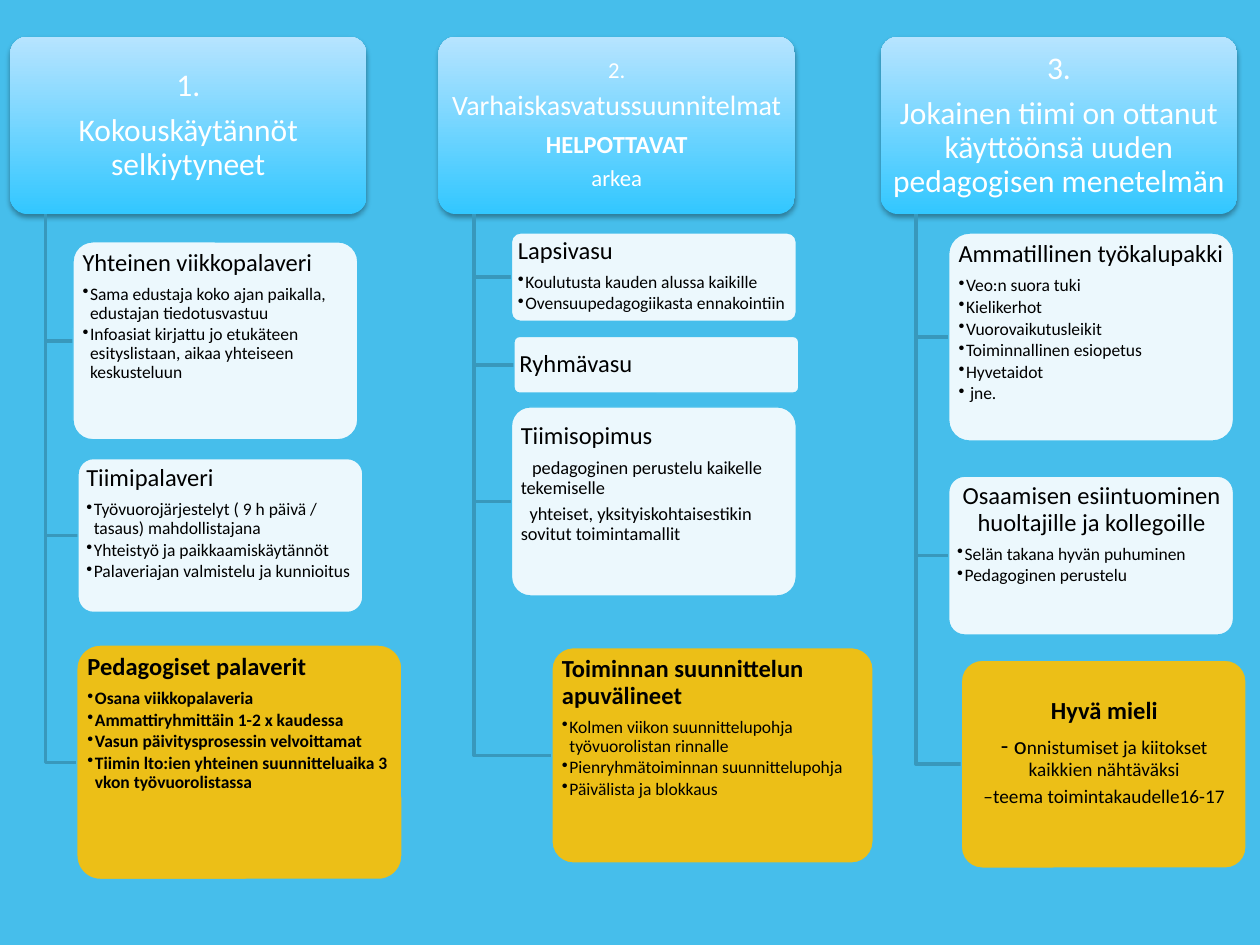
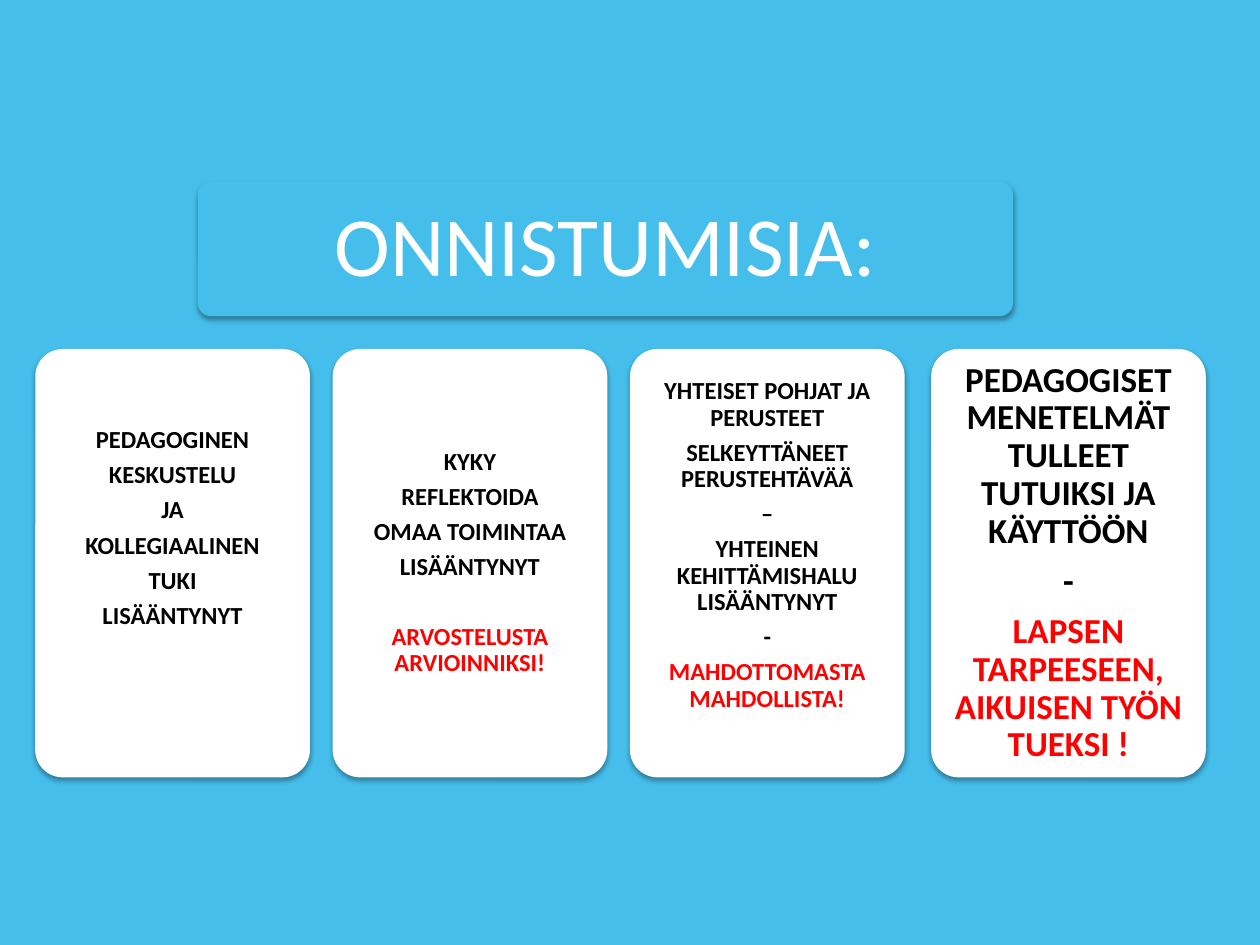
from lxml import etree
from pptx import Presentation
from pptx.dml.color import RGBColor
from pptx.enum.shapes import MSO_SHAPE
from pptx.enum.text import MSO_ANCHOR, PP_ALIGN
from pptx.oxml.ns import qn
from pptx.util import Inches, Pt

ROUNDED = MSO_SHAPE.ROUNDED_RECTANGLE
TOP, MIDDLE = MSO_ANCHOR.TOP, MSO_ANCHOR.MIDDLE
LEFT, CENTER = PP_ALIGN.LEFT, PP_ALIGN.CENTER

SKY, TRUNK = "46BEEB", "3898BC"
DEEP_BLUE, PALE_BLUE = "32C7FF", "B7E4FF"
WHITE, BLACK, AMBER, RED = "FFFFFF", "000000", "FFC000", "FF0000"

HEADER_TOP, HEADER_WIDTH, HEADER_HEIGHT = 0.29, 2.83, 1.41
TRUNK_OFFSET = 0.28


def rgb(color):
    return RGBColor.from_string(color)


def para(*runs, size=14, color=BLACK, bold=False, align=LEFT,
         gap=0.35, bullet=False, indent=0, extra=0):
    runs = [run if isinstance(run, tuple) else (run, {}) for run in runs]
    return dict(runs=runs, size=size, color=color, bold=bold, align=align,
                gap=gap, bullet=bullet, indent=indent, extra=extra)


def bullets(*texts, bold=False):
    return [para(text, size=10, gap=0.15, bullet=True, bold=bold) for text in texts]


def centred(*texts, **style):
    return [para(text, align=CENTER, **style) for text in texts]


def add_paragraph_marks(paragraph, spec_values):
    properties = paragraph._p.get_or_add_pPr()
    if spec_values["bullet"]:
        properties.set("marL", str(Inches(0.06)))
        properties.set("indent", str(-Inches(0.06)))
        etree.SubElement(properties, qn("a:buChar"), char="•")
    elif spec_values["indent"]:
        properties.set("indent", str(Inches(spec_values["indent"])))


def write_text(shape, paragraphs, anchor, insets):
    frame = shape.text_frame
    frame.word_wrap = True
    frame.vertical_anchor = anchor
    for side, inset in zip(("left", "top", "right", "bottom"), insets):
        setattr(frame, f"margin_{side}", Inches(inset))
    for index, values in enumerate(paragraphs):
        paragraph = frame.add_paragraph() if index else frame.paragraphs[0]
        spacing = {
            "alignment": values["align"],
            "line_spacing": 0.9,
            "space_before": Pt(0),
            "space_after": Pt(values["size"] * values["gap"] + values["extra"]),
        }
        for name, value in spacing.items():
            setattr(paragraph, name, value)
        add_paragraph_marks(paragraph, values)
        for text, changes in values["runs"]:
            run = paragraph.add_run()
            run.text = text
            style = {"name": "Calibri", "size": Pt(values["size"]),
                     "bold": values["bold"]} | changes
            for name, value in style.items():
                setattr(run.font, name, value)
            run.font.color.rgb = rgb(values["color"])


def add_rounded(slide, box, fill):
    shape = slide.shapes.add_shape(ROUNDED, *map(Inches, box))
    shape.adjustments[0] = 0.1
    shape.shadow.inherit = False
    shape.fill.solid()
    shape.fill.fore_color.rgb = rgb(fill)
    shape.line.fill.background()
    return shape


def cast_shadow(shape):
    effects = shape._element.spPr.find(qn("a:effectLst"))
    shadow = etree.SubElement(
        effects, qn("a:outerShdw"), blurRad=str(Pt(3.1)), dist=str(Pt(1.8)),
        dir="5400000", algn="t", rotWithShape="0")
    color = etree.SubElement(shadow, qn("a:srgbClr"), val=BLACK)
    etree.SubElement(color, qn("a:alpha"), val="35000")


def add_header(slide, left, paragraphs):
    header = add_rounded(slide, (left, HEADER_TOP, HEADER_WIDTH, HEADER_HEIGHT), DEEP_BLUE)
    header.fill.gradient()
    header.fill.gradient_angle = 90
    for stop, position, color in zip(header.fill.gradient_stops, (0, 1), (DEEP_BLUE, PALE_BLUE)):
        stop.position = position
        stop.color.rgb = rgb(color)
    cast_shadow(header)
    write_text(header, paragraphs, MIDDLE, (0.04, 0.03, 0.04, 0.03))


def add_branch(slide, trunk, box):
    left, top, _, height = box
    start = HEADER_TOP + HEADER_HEIGHT
    middle = top + height / 2
    builder = slide.shapes.build_freeform(Inches(trunk), Inches(start), scale=1)
    builder.add_line_segments(
        [(Inches(trunk), Inches(middle)), (Inches(left), Inches(middle))], close=False)
    branch = builder.convert_to_shape()
    branch.fill.background()
    branch.shadow.inherit = False
    branch.line.color.rgb = rgb(TRUNK)
    branch.line.width = Pt(2)


def add_topic(slide, box, paragraphs, fill=WHITE, anchor=TOP, bottom=0.02):
    topic = add_rounded(slide, box, fill)
    color = topic._element.spPr.find(qn("a:solidFill"))[0]
    etree.SubElement(color, qn("a:alpha"), val="90000")
    topic.line.color.rgb = rgb(SKY)
    topic.line.width = Pt(0.75)
    write_text(topic, paragraphs, anchor, (0.03, 0.02, 0.02, bottom))


def add_column(slide, left, header, topics):
    add_header(slide, left, header)
    for topic in topics:
        add_branch(slide, left + TRUNK_OFFSET, topic["box"])
        add_topic(slide, **topic)


def add_banner(slide, box, text):
    banner = add_rounded(slide, box, SKY)
    cast_shadow(banner)
    write_text(banner, centred(text, size=48, color=WHITE), MIDDLE, (0.2,) * 4)


def add_success(slide, left, paragraphs, inset=0.06, bottom=0):
    success = add_rounded(slide, (left, 2.77, 2.18, 3.4), WHITE)
    cast_shadow(success)
    write_text(success, paragraphs, MIDDLE, (inset, inset, inset, inset + bottom))


def add_blue_slide(deck):
    slide = deck.slides.add_slide(deck.slide_layouts[6])
    slide.background.fill.solid()
    slide.background.fill.fore_color.rgb = rgb(SKY)
    return slide


COLUMNS = [
    (0.08, centred("1.", "Kokouskäytännöt selkiytyneet", size=18, color=WHITE), [
        dict(box=(0.58, 1.92, 2.26, 1.57), paragraphs=[
            para("Yhteinen viikkopalaveri"),
            *bullets("Sama edustaja koko ajan paikalla, edustajan tiedotusvastuu",
                     "Infoasiat kirjattu jo etukäteen esityslistaan, aikaa yhteiseen keskusteluun")]),
        dict(box=(0.62, 3.64, 2.26, 1.22), paragraphs=[
            para("Tiimipalaveri"),
            *bullets("Työvuorojärjestelyt ( 9 h päivä / tasaus) mahdollistajana",
                     "Yhteistyö ja paikkaamiskäytännöt",
                     "Palaveriajan valmistelu ja kunnioitus")]),
        dict(box=(0.61, 5.12, 2.58, 1.86), fill=AMBER, paragraphs=[
            para("Pedagogiset palaverit", bold=True),
            *bullets("Osana viikkopalaveria",
                     "Ammattiryhmittäin 1-2 x kaudessa",
                     "Vasun päivitysprosessin velvoittamat",
                     "Tiimin lto:ien yhteinen suunnitteluaika 3 vkon työvuorolistassa",
                     bold=True)]),
    ]),
    (3.48, [
        *centred("2.", size=13, color=WHITE),
        *centred("Varhaiskasvatussuunnitelmat", size=16, color=WHITE),
        *centred("HELPOTTAVAT", color=WHITE, bold=True),
        *centred("arkea", size=13, color=WHITE)], [
        dict(box=(4.06, 1.85, 2.26, 0.7), paragraphs=[
            para("Lapsivasu"),
            *bullets("Koulutusta kauden alussa kaikille",
                     "Ovensuupedagogiikasta ennakointiin")]),
        dict(box=(4.08, 2.67, 2.26, 0.45), anchor=MIDDLE, paragraphs=[para("Ryhmävasu")]),
        dict(box=(4.06, 3.23, 2.26, 1.5), anchor=MIDDLE, bottom=0.3, paragraphs=[
            para("Tiimisopimus"),
            para("pedagoginen perustelu kaikelle tekemiselle", size=10.5, indent=0.09),
            para("yhteiset, yksityiskohtaisestikin sovitut toimintamallit",
                 size=10.5, indent=0.07)]),
        dict(box=(4.38, 5.14, 2.55, 1.71), fill=AMBER, paragraphs=[
            para("Toiminnan suunnittelun apuvälineet", bold=True),
            *bullets("Kolmen viikon suunnittelupohja työvuorolistan rinnalle",
                     "Pienryhmätoiminnan suunnittelupohja",
                     "Päivälista ja blokkaus")]),
    ]),
    (6.99, centred("3.", "Jokainen tiimi on ottanut käyttöönsä uuden pedagogisen menetelmän",
                   size=18, color=WHITE), [
        dict(box=(7.53, 1.85, 2.26, 1.65), paragraphs=[
            para("Ammatillinen työkalupakki"),
            *bullets("Veo:n suora tuki", "Kielikerhot", "Vuorovaikutusleikit",
                     "Toiminnallinen esiopetus", "Hyvetaidot", " jne.")]),
        dict(box=(7.53, 3.78, 2.26, 1.26), paragraphs=[
            *centred("Osaamisen esiintuominen huoltajille ja kollegoille"),
            *bullets("Selän takana hyvän puhuminen", "Pedagoginen perustelu")]),
        dict(box=(7.63, 5.24, 2.26, 1.65), fill=AMBER, anchor=MIDDLE, bottom=0.2, paragraphs=[
            *centred("Hyvä mieli", bold=True),
            para(("- o", {"size": Pt(14)}), "nnistumiset ja kiitokset kaikkien nähtäväksi",
                 size=11, align=CENTER),
            *centred("–teema toimintakaudelle16-17", size=11)]),
    ]),
]

SUCCESSES = [
    dict(left=0.28, bottom=0.55, paragraphs=centred(
        "PEDAGOGINEN", "KESKUSTELU", "JA", "KOLLEGIAALINEN", "TUKI", "LISÄÄNTYNYT", bold=True)),
    dict(left=2.64, paragraphs=[
        *centred("KYKY", "REFLEKTOIDA", "OMAA TOIMINTAA", bold=True),
        *centred("LISÄÄNTYNYT", bold=True, extra=20),
        *centred("ARVOSTELUSTA ARVIOINNIKSI!", bold=True, color=RED)]),
    dict(left=5, bottom=0.28, paragraphs=[
        *centred("YHTEISET POHJAT JA PERUSTEET", "SELKEYTTÄNEET PERUSTEHTÄVÄÄ", "–",
                 "YHTEINEN KEHITTÄMISHALU LISÄÄNTYNYT", "-", bold=True),
        *centred("MAHDOTTOMASTA MAHDOLLISTA!", bold=True, color=RED)]),
    dict(left=7.39, inset=0.08, paragraphs=[
        *centred("PEDAGOGISET MENETELMÄT TULLEET TUTUIKSI JA KÄYTTÖÖN", "-", size=20, bold=True),
        *centred("LAPSEN TARPEESEEN, AIKUISEN TYÖN TUEKSI !", size=20, bold=True, color=RED)]),
]


def main():
    deck = Presentation()
    deck.slide_width, deck.slide_height = Inches(10), Inches(7.5)

    results = add_blue_slide(deck)
    for left, header, topics in COLUMNS:
        add_column(results, left, header, topics)

    successes = add_blue_slide(deck)
    add_banner(successes, (1.57, 1.44, 6.47, 1.07), "ONNISTUMISIA:")
    for success in SUCCESSES:
        add_success(successes, **success)

    deck.save("out.pptx")


if __name__ == "__main__":
    main()
